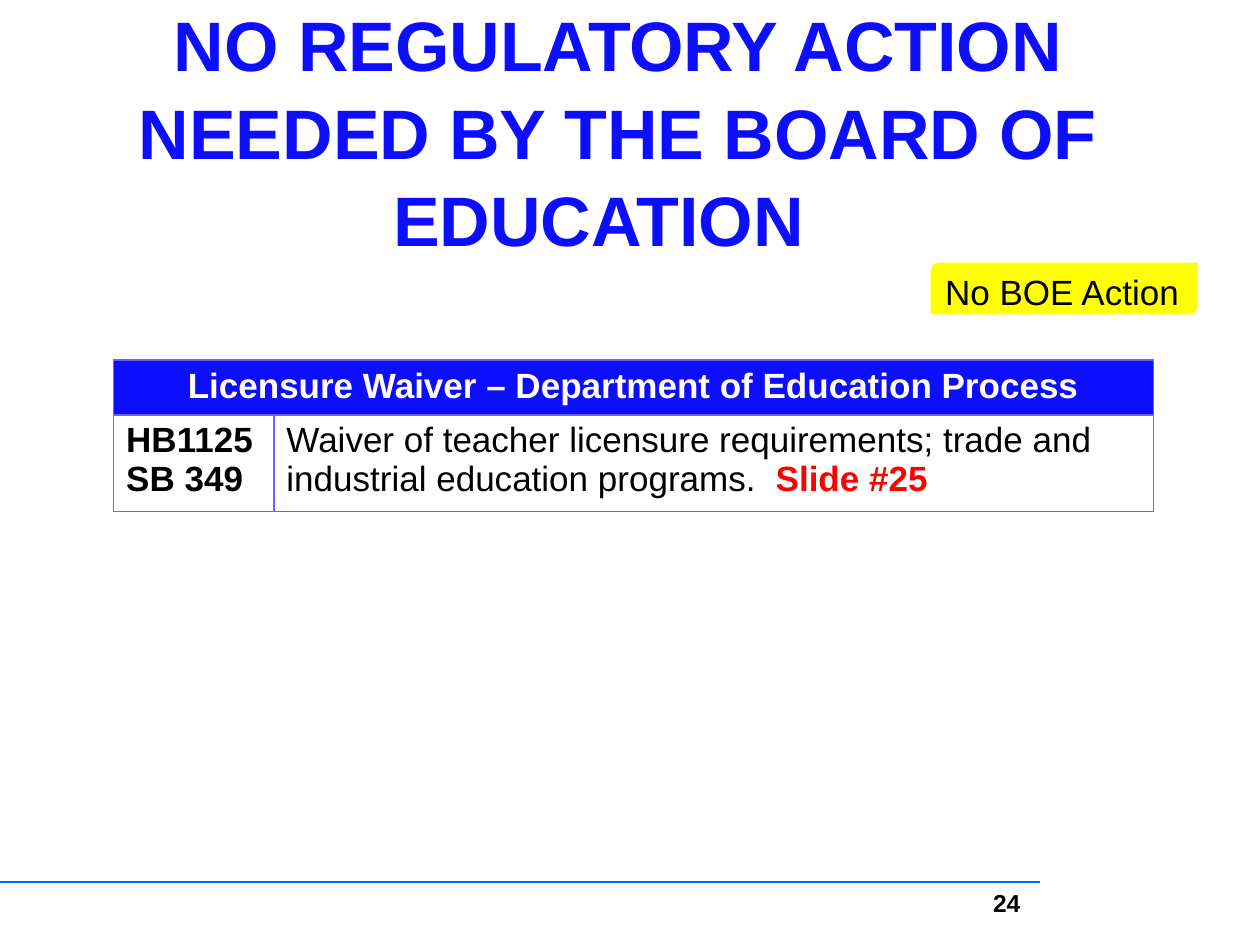
import copy

import pptx
import pptx.dml.color
import pptx.enum.shapes
import pptx.enum.text
import pptx.oxml.ns
import pptx.oxml.xmlchemy
import pptx.util
from lxml import etree

Cm = pptx.util.Cm
Pt = pptx.util.Pt
RGBColor = pptx.dml.color.RGBColor
ALIGN = pptx.enum.text.PP_ALIGN
ANCHOR = pptx.enum.text.MSO_ANCHOR
qn = pptx.oxml.ns.qn

BLUE = RGBColor(0x0D, 0x0D, 0xFF)
RULE_BLUE = RGBColor(0x00, 0x66, 0xFF)
BORDER_BLUE = RGBColor(0x66, 0x66, 0xFF)
YELLOW = RGBColor(0xFF, 0xFF, 0x00)
RED = RGBColor(0xFF, 0x00, 0x00)
WHITE = RGBColor(0xFF, 0xFF, 0xFF)
BLACK = RGBColor(0x00, 0x00, 0x00)


def add_run(paragraph, text, size=20, color=BLACK, bold=False):
    run = paragraph.add_run()
    run.text = text
    run.font.name = "Arial"
    run.font.size = Pt(size)
    run.font.bold = bold
    run.font.color.rgb = color
    return run


def add_title(slide, text):
    title = slide.shapes.add_textbox(Cm(0.28), Cm(1.4), Cm(24.36), Cm(4.11))
    frame = title.text_frame
    frame.word_wrap = True
    frame.vertical_anchor = ANCHOR.MIDDLE
    paragraph = frame.paragraphs[0]
    paragraph.alignment = ALIGN.CENTER
    paragraph.line_spacing = 1.04
    heading = add_run(paragraph, text, 40, BLUE, True)

    # The closing line break keeps the heading's size
    paragraph.add_line_break()
    line_break = paragraph._p.find(qn("a:br"))
    line_break.append(copy.deepcopy(heading.font._element))
    etree.SubElement(paragraph._p, qn("a:endParaRPr"), sz="4000", b="1")


def add_badge(slide, text):
    badge = slide.shapes.add_shape(
        pptx.enum.shapes.MSO_SHAPE.ROUND_2_DIAG_RECTANGLE,
        Cm(18.75), Cm(5.28), Cm(5.41), Cm(1.07))
    badge.shadow.inherit = False
    badge.fill.solid()
    badge.fill.fore_color.rgb = YELLOW
    badge.line.color.rgb = WHITE
    badge.line.width = Pt(0.75)
    badge.text_frame.word_wrap = True
    badge.text_frame.vertical_anchor = ANCHOR.TOP
    paragraph = badge.text_frame.paragraphs[0]
    paragraph.alignment = ALIGN.LEFT
    add_run(paragraph, text)


def style_cell(cell, color):
    properties = cell._tc.get_or_add_tcPr()
    for side in ("lnL", "lnR", "lnT", "lnB"):
        border = etree.SubElement(properties, qn(f"a:{side}"), w=str(Pt(1)))
        fill = etree.SubElement(border, qn("a:solidFill"))
        etree.SubElement(fill, qn("a:srgbClr"), val=str(BORDER_BLUE))
    if color is None:
        cell.fill.background()
    else:
        cell.fill.solid()
        cell.fill.fore_color.rgb = color


def add_bill_table(slide):
    widths, heights = (3.23, 17.73), (0.97, 1.9)
    bills = slide.shapes.add_table(
        2, 2, Cm(2.29), Cm(7.26), Cm(sum(widths)), Cm(sum(heights))).table
    for column, width in zip(bills.columns, widths):
        column.width = Cm(width)
    for row, height, color in zip(bills.rows, heights, (BLUE, None)):
        row.height = Cm(height)
        for cell in row.cells:
            style_cell(cell, color)

    # Heading across both columns
    heading = bills.cell(0, 0)
    heading.merge(bills.cell(0, 1))
    paragraph = heading.text_frame.paragraphs[0]
    paragraph.alignment = ALIGN.CENTER
    add_run(paragraph, "Licensure Waiver – Department of Education Process",
            color=WHITE, bold=True)

    # Bill numbers and summary
    numbers = bills.cell(1, 0).text_frame
    add_run(numbers.paragraphs[0], "HB1125", bold=True)
    add_run(numbers.add_paragraph(), "SB 349", bold=True)
    summary = bills.cell(1, 1).text_frame.paragraphs[0]
    add_run(summary, "Waiver of teacher licensure requirements; trade and "
                     "industrial education programs.  ")
    add_run(summary, "Slide #25", color=RED, bold=True)


def add_footer(slide, number):
    rule = slide.shapes.add_connector(
        pptx.enum.shapes.MSO_CONNECTOR.STRAIGHT,
        Cm(20.96), Cm(17.78), Cm(0), Cm(17.78))
    rule.line.color.rgb = RULE_BLUE
    rule.line.width = Pt(1.25)
    etree.SubElement(rule._element.spPr, qn("a:effectLst"))

    page = slide.shapes.add_textbox(Cm(18.97), Cm(17.78), Cm(1.85), Cm(1.27))
    page.text_frame.word_wrap = True
    paragraph = page.text_frame.paragraphs[0]
    paragraph.alignment = ALIGN.RIGHT
    add_run(paragraph, number, 14, bold=True)


def main():
    deck = pptx.Presentation()
    deck.slide_width, deck.slide_height = Cm(25.4), Cm(19.05)
    slide = deck.slides.add_slide(deck.slide_layouts[6])
    add_title(slide, "NO REGULATORY ACTION NEEDED BY THE BOARD OF EDUCATION  ")
    add_bill_table(slide)
    add_badge(slide, "No BOE Action")
    add_footer(slide, "24")
    deck.save("out.pptx")


if __name__ == "__main__":
    main()
